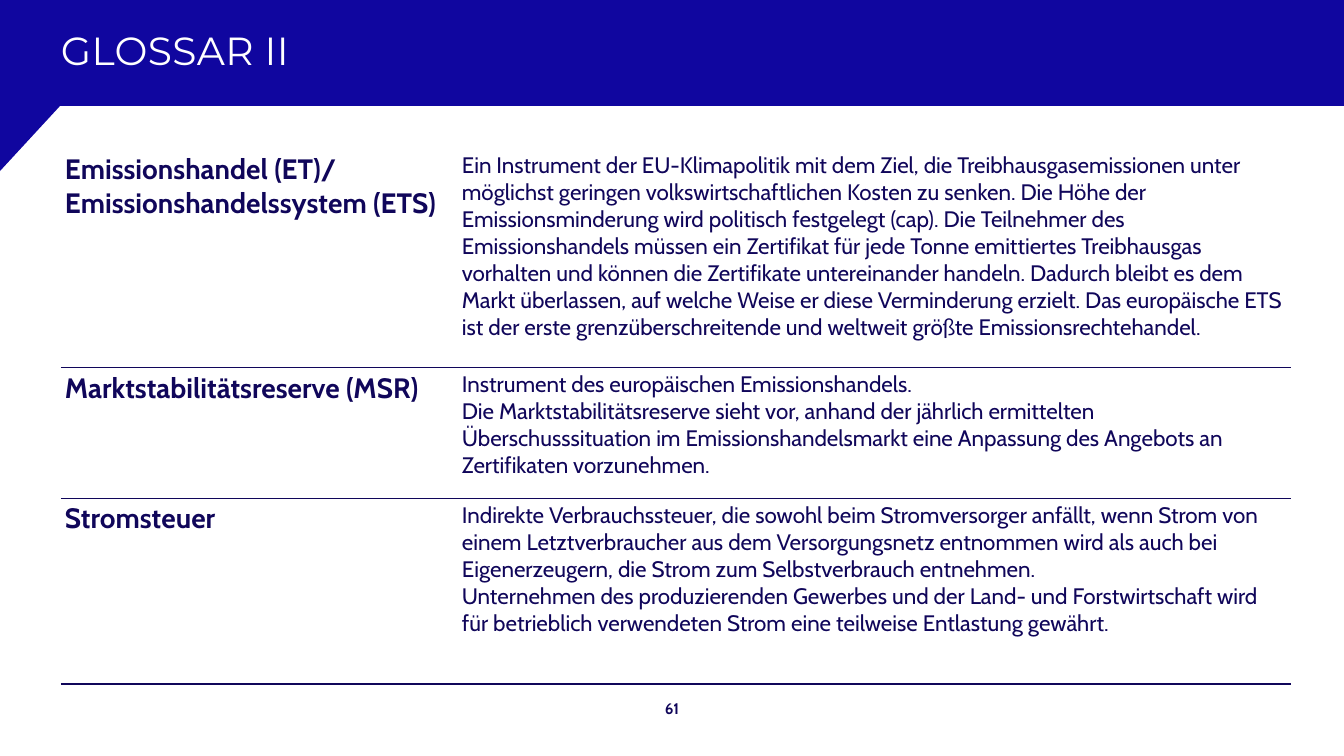
import pptx
import pptx.dml.color
import pptx.enum.text
import pptx.oxml
import pptx.oxml.ns
import pptx.util

GLOSSARY = [
    (219, ["Emissionshandel (ET)/", "Emissionshandelssystem (ETS)"],
     ["Ein Instrument der EU-Klimapolitik mit dem Ziel, die Treibhausgasemissionen unter "
      "möglichst geringen volkswirtschaftlichen Kosten zu senken. Die Höhe der "
      "Emissionsminderung wird politisch festgelegt (cap). Die Teilnehmer des "
      "Emissionshandels müssen ein Zertifikat für jede Tonne emittiertes Treibhausgas "
      "vorhalten und können die Zertifikate untereinander handeln. Dadurch bleibt es dem "
      "Markt überlassen, auf welche Weise er diese Verminderung erzielt. Das europäische ETS "
      "ist der erste grenzüberschreitende und weltweit größte Emissionsrechtehandel."]),
    (131, ["Marktstabilitätsreserve (MSR)"],
     ["Instrument des europäischen Emissionshandels.",
      "Die Marktstabilitätsreserve sieht vor, anhand der jährlich ermittelten "
      "Überschusssituation im Emissionshandelsmarkt eine Anpassung des Angebots an "
      "Zertifikaten vorzunehmen."]),
    (186, ["Stromsteuer"],
     ["Indirekte Verbrauchssteuer, die sowohl beim Stromversorger anfällt, wenn Strom von "
      "einem Letztverbraucher aus dem Versorgungsnetz entnommen wird als auch bei "
      "Eigenerzeugern, die Strom zum Selbstverbrauch entnehmen.",
      "Unternehmen des produzierenden Gewerbes und der Land- und Forstwirtschaft wird "
      "für betrieblich verwendeten Strom eine teilweise Entlastung gewährt."]),
]


def px(length):
    return round(length * 914400 / 100.8)


def rgb(colour):
    return pptx.dml.color.RGBColor.from_string(colour)


class GlossarySlide:
    BAND, INK, WHITE = "10069F", "10065A", "FFFFFF"
    HEADING_FONT, BODY_FONT = "Montserrat", "Cabin"

    def __init__(self, deck):
        self.slide = deck.slides.add_slide(deck.slide_layouts[5])
        self.shapes = self.slide.shapes

    def set_text(self, frame, lines, font, size, colour, bold=False,
                 align=pptx.enum.text.PP_ALIGN.LEFT):
        frame.word_wrap = True
        for number, line in enumerate(lines):
            paragraph = frame.add_paragraph() if number else frame.paragraphs[0]
            paragraph.text = line
            paragraph.alignment = align
            paragraph.font.name = font
            paragraph.font.size = pptx.util.Pt(size)
            paragraph.font.bold = bold
            paragraph.font.color.rgb = rgb(colour)

    def inset(self, box, side, end):
        box.margin_left = box.margin_right = px(side)
        box.margin_top = box.margin_bottom = px(end)

    def band(self, corners):
        outline = self.shapes.build_freeform(*corners[0], scale=px(1))
        outline.add_line_segments(corners[1:], close=True)
        band = outline.convert_to_shape()
        band.shadow.inherit = False
        band.fill.solid()
        band.fill.fore_color.rgb = rgb(self.BAND)
        band.line.fill.background()

    def title(self, text, left, top, width, height):
        title = self.shapes.title
        title.left, title.top, title.width, title.height = map(px, (left, top, width, height))
        frame = title.text_frame
        self.inset(frame, 0, 4)
        frame.auto_size = pptx.enum.text.MSO_AUTO_SIZE.NONE
        frame.vertical_anchor = pptx.enum.text.MSO_ANCHOR.MIDDLE
        self.set_text(frame, [text], self.HEADING_FONT, 28, self.WHITE)
        frame.paragraphs[0].runs[0].font._element.set("spc", "30")
        title.element.getparent().append(title.element)

    def page_number(self, text, left, top, width, height):
        frame = self.shapes.add_textbox(*map(px, (left, top, width, height))).text_frame
        self.inset(frame, 0, 0)
        frame.vertical_anchor = pptx.enum.text.MSO_ANCHOR.MIDDLE
        self.set_text(frame, [text], self.BODY_FONT, 11, self.INK, True,
                      pptx.enum.text.PP_ALIGN.CENTER)

    def rule(self, cell, side, points):
        fill = "<a:noFill/>"
        if points:
            fill = f'<a:solidFill><a:srgbClr val="{self.INK}"/></a:solidFill>'
        cell._tc.get_or_add_tcPr().append(pptx.oxml.parse_xml(
            f'<a:ln{side} {pptx.oxml.ns.nsdecls("a")} w="{pptx.util.Pt(points)}">'
            f"{fill}</a:ln{side}>"))

    def glossary(self, entries, left, top, widths):
        heights = [height for height, _, _ in entries]
        table = self.shapes.add_table(len(entries), len(widths), px(left), px(top),
                                      px(sum(widths)), px(sum(heights))).table
        table.first_row = table.horz_banding = False
        for column, width in zip(table.columns, widths):
            column.width = px(width)
        for number, (height, term, meaning) in enumerate(entries):
            table.rows[number].height = px(height)
            above = 0.59 if number else 0
            below = 1.18 if number == len(entries) - 1 else 0.59
            for column, (lines, size, bold) in enumerate([(term, 20, True), (meaning, 16, False)]):
                cell = table.cell(number, column)
                for side, points in zip("LRTB", (0, 0, above, below)):
                    self.rule(cell, side, points)
                cell.fill.background()
                self.inset(cell, 4, 4)
                self.set_text(cell.text_frame, lines, self.BODY_FONT, size, self.INK, bold)


def main():
    deck = pptx.Presentation()
    deck.slide_width, deck.slide_height = px(1344), px(756)
    page = GlossarySlide(deck)
    page.band([(0, 0), (1344, 0), (1344, 106), (60, 106), (0, 171)])
    page.page_number("61", 642, 694, 60, 28)
    page.glossary(GLOSSARY, 61, 148, [397, 833])
    page.title("GLOSSAR II", 61, 0, 1230, 99)
    deck.save("out.pptx")


if __name__ == "__main__":
    main()
